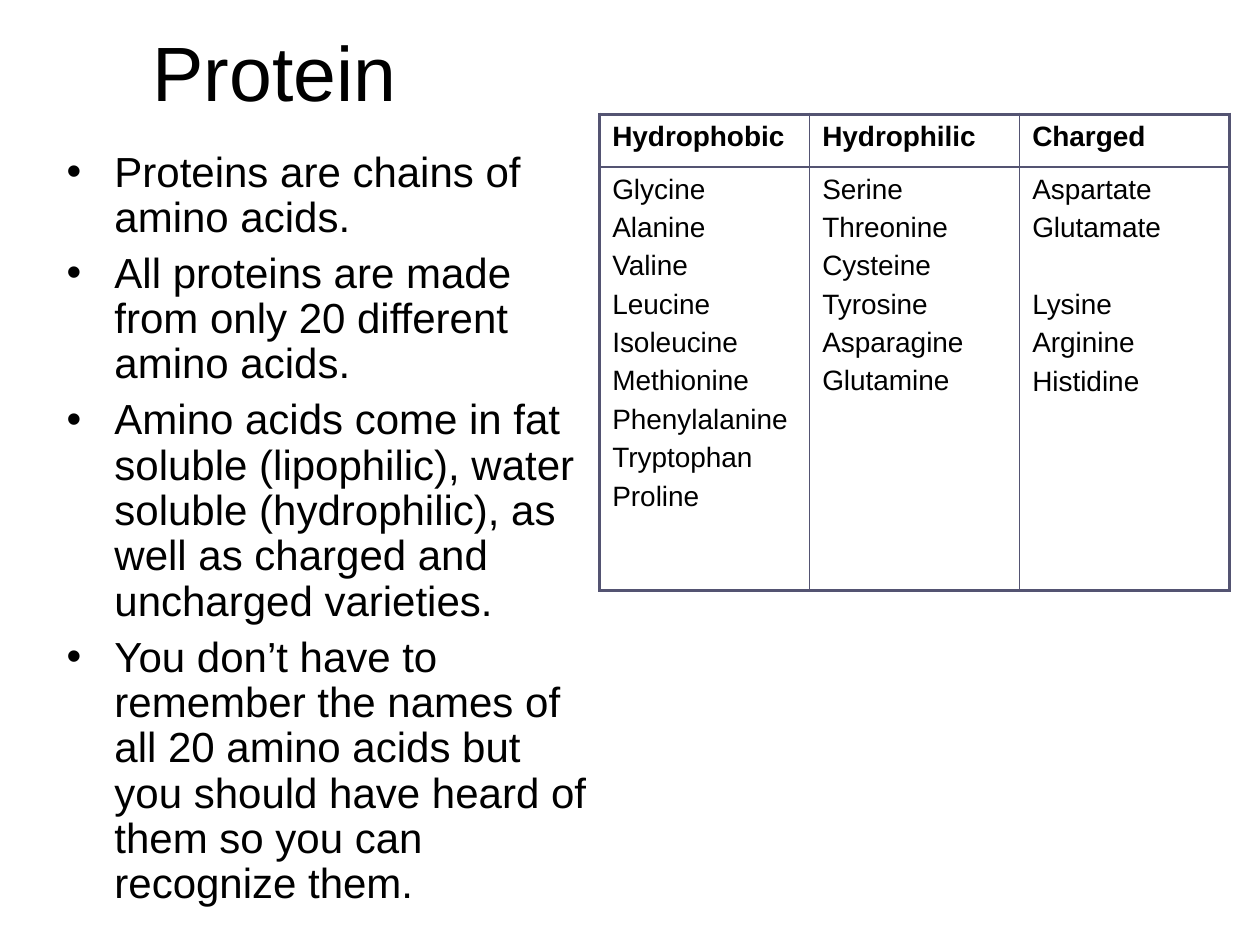
from lxml.etree import SubElement
from pptx import Presentation
from pptx.dml.color import RGBColor
from pptx.enum.text import MSO_ANCHOR, PP_ALIGN
from pptx.oxml.ns import qn
from pptx.util import Inches, Pt

WIDE, HIGH = 10, 7.5
INK = {"text": "000000", "paper": "FFFFFF", "rule": "545472"}
POINTS = [
    "Proteins are chains of amino acids.",
    "All proteins are made from only 20 different amino acids.",
    "Amino acids come in fat soluble (lipophilic), water soluble (hydrophilic), "
    "as well as charged and uncharged varieties.",
    "You don’t have to remember the names of all 20 amino acids but you should "
    "have heard of them so you can recognize them.",
]
ACIDS = {
    "Hydrophobic": [["Glycine", "Alanine", "Valine", "Leucine", "Isoleucine",
                     "Methionine", "Phenylalanine", "Tryptophan", "Proline"]],
    "Hydrophilic": [["Serine", "Threonine", "Cysteine", "Tyrosine",
                     "Asparagine", "Glutamine"]],
    "Charged": [["Aspartate", "Glutamate"], ["Lysine", "Arginine", "Histidine"]],
}


def place(left, top, width, height):
    """Turn shares of the slide into a box of lengths."""
    return (Inches(left * WIDE), Inches(top * HIGH),
            Inches(width * WIDE), Inches(height * HIGH))


def write(frame, lines, size, bold=False):
    """Fill a frame with one paragraph per line and return the paragraphs."""
    frame.text = "\n".join(lines)
    frame.word_wrap = True
    for para in frame.paragraphs:
        for run in para.runs:
            font = run.font
            font.name, font.size, font.bold = "Arial", Pt(size), bold
            font.color.rgb = RGBColor.from_string(INK["text"])
    return frame.paragraphs


def add_title(slide, box):
    """Place the centred heading at the foot of its box."""
    frame = slide.shapes.add_textbox(*box).text_frame
    frame.vertical_anchor = MSO_ANCHOR.BOTTOM
    write(frame, ["Protein"], 44)[0].alignment = PP_ALIGN.CENTER


def add_points(slide, box):
    """Place the bulleted list."""
    frame = slide.shapes.add_textbox(*box).text_frame
    for para in write(frame, POINTS, 24):
        para.line_spacing, para.space_before = 0.9, Pt(6)
        props = para._p.get_or_add_pPr()
        props.set("marL", str(Inches(0.38)))
        props.set("indent", str(-Inches(0.38)))
        SubElement(props, qn("a:buFont"), typeface="Arial")
        SubElement(props, qn("a:buChar"), char="•")


def edge(cell, outer):
    """Rule the four sides of a cell, heavier where the side is outer."""
    props = cell._tc.get_or_add_tcPr()
    for side, heavy in zip("LRTB", outer):
        line = SubElement(props, qn("a:ln" + side), w=str(Pt(2.25 if heavy else 1)))
        fill = SubElement(line, qn("a:solidFill"))
        SubElement(fill, qn("a:srgbClr"), val=INK["rule"])


def add_acids(slide, box):
    """Place the table of amino acids, one column per class."""
    count = len(ACIDS)
    table = slide.shapes.add_table(2, count, *box).table
    table.rows[0].height = int(box[3] / 9)
    table.rows[1].height = box[3] - table.rows[0].height
    for col, (head, groups) in enumerate(ACIDS.items()):
        names = sum(groups, [])
        starts = [group[0] for group in groups[1:]]
        for row, lines in enumerate([[head], names]):
            cell = table.cell(row, col)
            edge(cell, (col == 0, col == count - 1, row == 0, row == 1))
            cell.fill.solid()
            cell.fill.fore_color.rgb = RGBColor.from_string(INK["paper"])
            for para in write(cell.text_frame, lines, 16, row == 0):
                para.line_spacing = 1.01
                para.space_before = Pt(26 if para.text in starts else 4)


def main():
    """Build and save the slide."""
    deck = Presentation()
    deck.slide_width, deck.slide_height = Inches(WIDE), Inches(HIGH)
    slide = deck.slides.add_slide(deck.slide_layouts[6])
    add_title(slide, place(0.043, 0.02, 0.35, 0.11))
    add_points(slide, place(0.043, 0.153, 0.441, 0.59))
    add_acids(slide, place(0.476, 0.121, 0.5, 0.504))
    deck.save("out.pptx")


if __name__ == "__main__":
    main()
